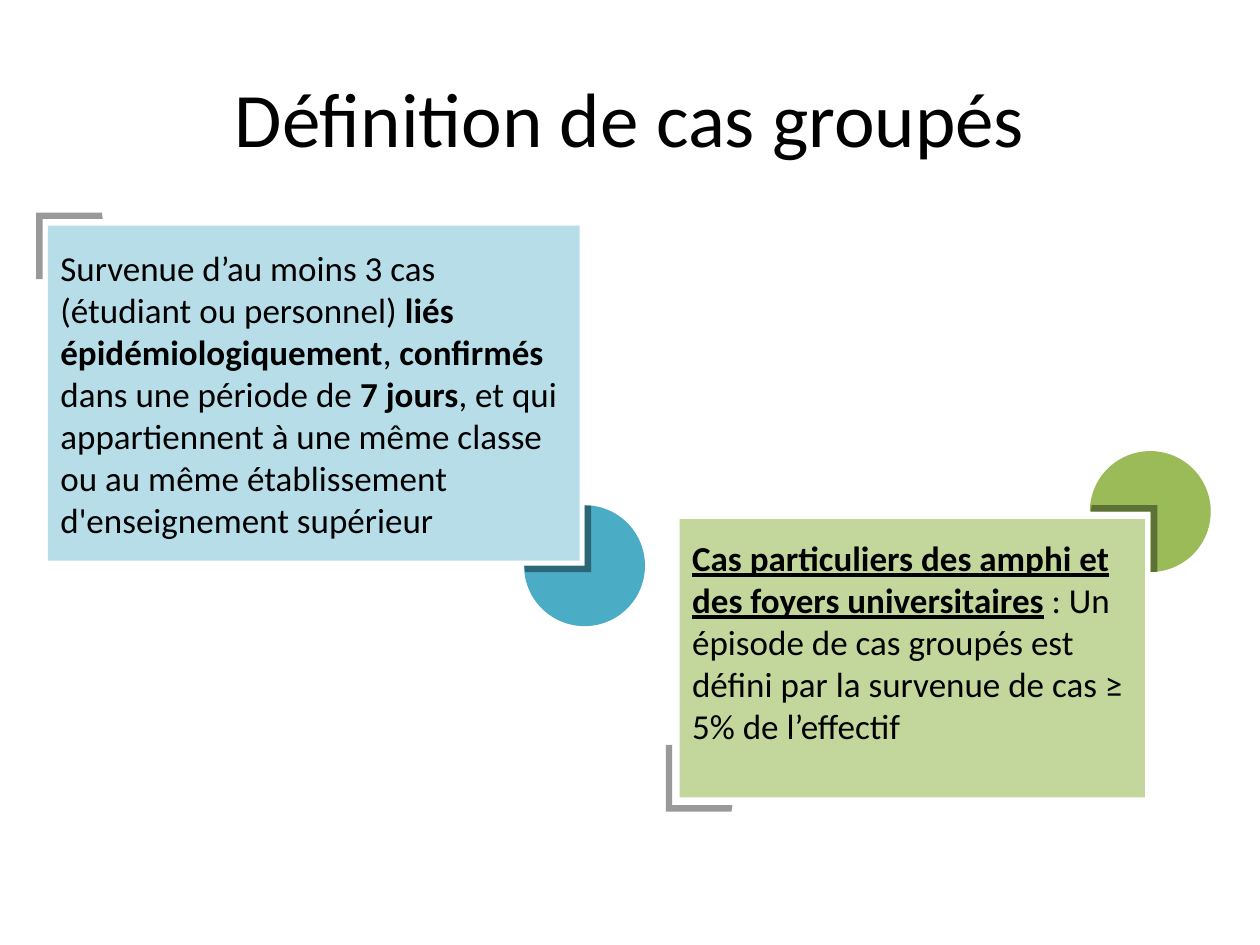
from lxml import etree
from pptx import Presentation
from pptx.dml.color import RGBColor
from pptx.enum import shapes as kinds, text as styles
from pptx.oxml.ns import qn
from pptx.util import Pt

FONT = "Calibri"
ARM, THICK, SLANT = 38, 3.6, 0.5

# Each span: wording, bold, underlined
TITLE = [("Définition de cas groupés", False, False)]
GENERAL_CASE = [
    ("Survenue d’au moins 3 cas (étudiant ou personnel) ", False, False),
    ("liés épidémiologiquement", True, False),
    (", ", False, False),
    ("confirmés ", True, False),
    ("dans une période de ", False, False),
    ("7 jours", True, False),
    (", et qui appartiennent à une même classe ou au même établissement "
     "d'enseignement supérieur", False, False),
]
SPECIAL_CASE = [
    ("Cas particuliers des amphi et des foyers universitaires", True, True),
    (" : Un épisode de cas groupés est défini par la survenue de cas ≥ 5% "
     "de l’effectif", False, False),
]

# Box, fill, spans, top and bottom inset
PANELS = [
    ((27.4, 128.9, 303.8, 191.5), "B7DEE8", GENERAL_CASE, 7.2, 7.2),
    ((388.4, 296.6, 265.8, 159.1), "C3D69B", SPECIAL_CASE, 3.6, 22.8),
]
# Box, fill, flips that turn the missing quarter towards its panel
PIES = [
    ((622.8, 257.8, 69.1, 69.1), "9BBB59", ("flipH", "flipV")),
    ((299.5, 288.7, 69.1, 69.1), "4BACC6", ("flipH",)),
]
# Outer corner, then the horizontal and vertical directions of the arms
BRACKETS = [
    (661.3, 288.7, -1, 1),
    (20.7, 121.5, 1, 1),
    (380.5, 463.7, 1, -1),
    (337.7, 326.9, -1, -1),
]


def paint(shape, color):
    shape.shadow.inherit = False
    shape.fill.solid()
    shape.fill.fore_color.rgb = RGBColor.from_string(color)
    shape.line.fill.background()


def write(shape, spans, size, align):
    frame = shape.text_frame
    frame.word_wrap = True
    frame.vertical_anchor = styles.MSO_ANCHOR.MIDDLE
    para = frame.paragraphs[0]
    para.alignment = align
    for wording, bold, underlined in spans:
        span = para.add_run()
        span.text = wording
        font = span.font
        font.name, font.size = FONT, Pt(size)
        font.bold, font.underline = bold, underlined
        font.color.rgb = RGBColor.from_string("000000")


def add_shape(page, kind, box, color):
    shape = page.shapes.add_shape(kind, *map(Pt, box))
    paint(shape, color)
    return shape


def add_bracket(page, x, y, dx, dy):
    """Draw a translucent L whose arms run from the outer corner (x, y)."""
    outline = [(0, 0), (ARM - SLANT, 0), (ARM, THICK),
               (THICK, THICK), (THICK, ARM), (0, ARM)]
    points = [(Pt(x + dx * across), Pt(y + dy * down)) for across, down in outline]
    builder = page.shapes.build_freeform(*points[0])
    builder.add_line_segments(points[1:], close=True)
    bracket = builder.convert_to_shape()
    paint(bracket, "000000")
    color = bracket._element.spPr.find(qn("a:solidFill"))[0]
    etree.SubElement(color, qn("a:alpha")).set("val", "40000")


def main():
    deck = Presentation()
    deck.slide_width, deck.slide_height = Pt(720), Pt(540)
    page = deck.slides.add_slide(deck.slide_layouts[6])

    title = page.shapes.add_textbox(Pt(36), Pt(21.6), Pt(648), Pt(90))
    write(title, TITLE, 44, styles.PP_ALIGN.CENTER)

    for box, color, spans, top, bottom in PANELS:
        panel = add_shape(page, kinds.MSO_SHAPE.RECTANGLE, box, color)
        panel.text_frame.margin_top = Pt(top)
        panel.text_frame.margin_bottom = Pt(bottom)
        write(panel, spans, 20, styles.PP_ALIGN.LEFT)

    for box, color, flips in PIES:
        pie = add_shape(page, kinds.MSO_SHAPE.PIE, box, color)
        for flip in flips:
            pie._element.spPr.find(qn("a:xfrm")).set(flip, "1")

    for bracket in BRACKETS:
        add_bracket(page, *bracket)

    deck.save("out.pptx")


if __name__ == "__main__":
    main()
